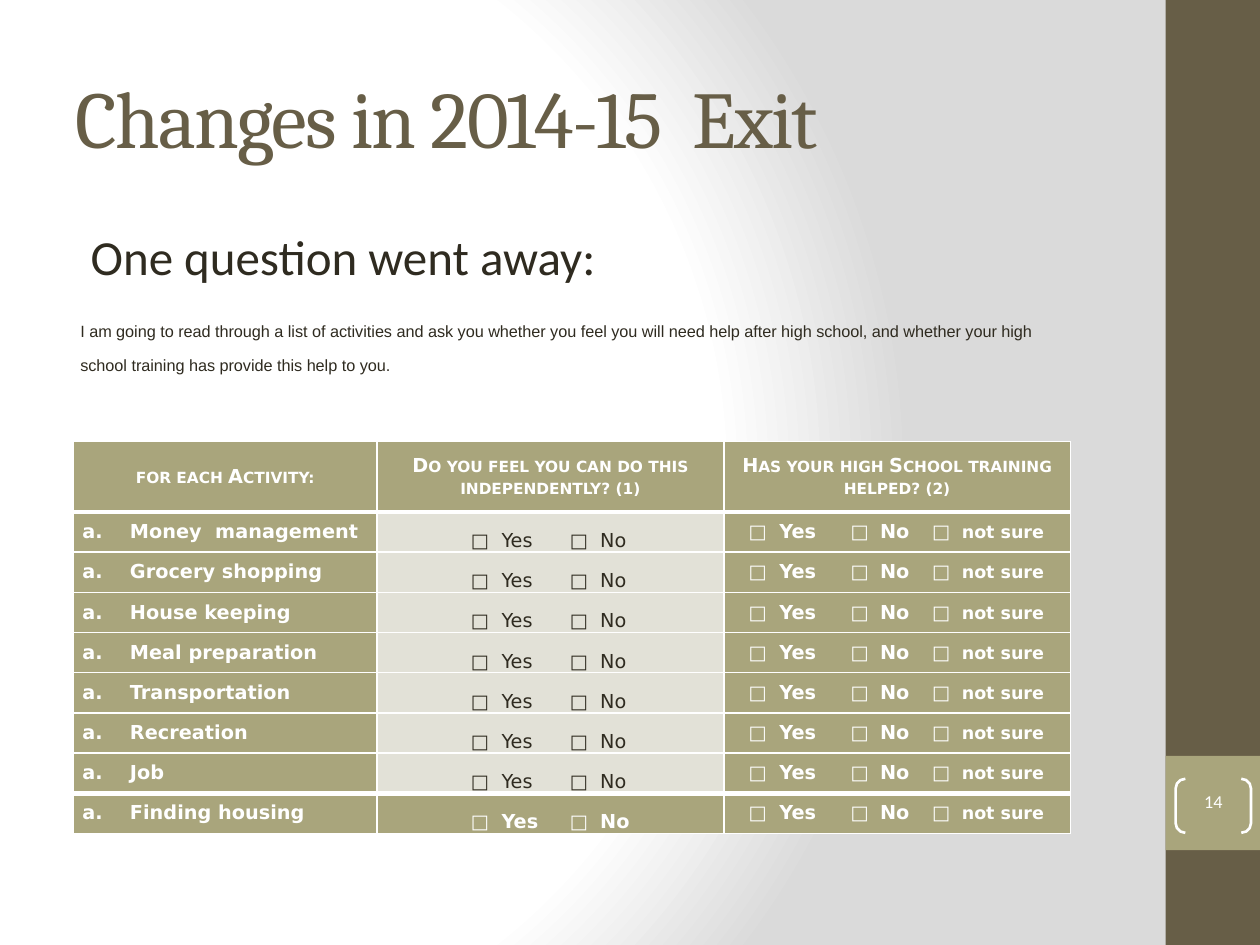
"""Build the slide on changes in the 2014-15 exit survey."""
from dataclasses import dataclass

from lxml.etree import SubElement
from pptx import Presentation
from pptx.dml.color import RGBColor
from pptx.enum.shapes import MSO_SHAPE as Shape
from pptx.enum.text import MSO_ANCHOR as Anchor, PP_ALIGN as Align
from pptx.oxml import parse_xml
from pptx.oxml.ns import nsdecls, qn
from pptx.util import Cm, Pt


@dataclass(frozen=True)
class Theme:
    dark: str = "675E47"
    accent: str = "A9A57C"
    pale: str = "E2E1D7"
    ink: str = "2F2B20"
    white: str = "FFFFFF"
    edge: str = "DADADA"
    title_size: int = 46
    lead_size: int = 28
    number_size: int = 18
    intro_size: int = 16
    table_size: int = 11
    note_size: int = 10
    title_font: str = "Cambria"
    body_font: str = "Calibri"
    intro_font: str = "Arial"
    table_font: str = "DejaVu Sans"


THEME = Theme()
INTRO = (
    "I am going to read through a list of activities and ask you whether you feel "
    "you will need help after high school, and whether your high school training "
    "has provide this help to you."
)
HEADERS = (
    "for each Activity:",
    "Do you feel you can do this independently? (1)",
    "Has your high School training helped? (2)",
)
ACTIVITIES = (
    "Money  management", "Grocery shopping", "House keeping", "Meal preparation",
    "Transportation", "Recreation", "Job", "Finding housing",
)
COLUMN_WIDTHS = (6.12, 6.99, 6.99)
HEADER_HEIGHT, ROW_HEIGHT = 1.42, 0.81
CELL_MARGIN = 0.18


def set_background(slide):
    stops = "".join(
        f'<a:gs pos="{position}000"><a:srgbClr val="{color}"/></a:gs>'
        for position, color in ((0, THEME.white), (75, THEME.white), (100, THEME.edge))
    )
    slide.element.cSld.insert(0, parse_xml(
        f'<p:bg {nsdecls("p", "a")}><p:bgPr><a:gradFill rotWithShape="1">'
        f'<a:gsLst>{stops}</a:gsLst><a:path path="circle">'
        '<a:fillToRect l="20000" t="50000" r="100000" b="50000"/></a:path>'
        '</a:gradFill><a:effectLst/></p:bgPr></p:bg>'
    ))


def style_paragraph(paragraph, font, size, color, bold=False, align=Align.LEFT, **extras):
    paragraph.alignment = align
    paragraph.font.name = font
    paragraph.font.size = Pt(size)
    paragraph.font.bold = bold
    paragraph.font.color.rgb = RGBColor.from_string(color)
    properties = paragraph._p.get_or_add_pPr().get_or_add_defRPr()
    for name, value in extras.items():
        properties.set(name, value)


def add_block(slide, kind, left, top, width, height, fill=None):
    shape = slide.shapes.add_shape(kind, Cm(left), Cm(top), Cm(width), Cm(height))
    shape.shadow.inherit = False
    shape.line.fill.background()
    if fill:
        shape.fill.solid()
        shape.fill.fore_color.rgb = RGBColor.from_string(fill)
    else:
        shape.fill.background()
    return shape


def add_text(slide, text, left, top, width, height, anchor, *style, **extras):
    frame = slide.shapes.add_textbox(Cm(left), Cm(top), Cm(width), Cm(height)).text_frame
    frame.word_wrap = True
    frame.vertical_anchor = anchor
    paragraph = frame.paragraphs[0]
    paragraph.add_run().text = text
    style_paragraph(paragraph, *style, **extras)
    return frame


def add_page_number(slide, number):
    bracket = add_block(slide, Shape.DOUBLE_BRACKET, 23.7, 15.7, 1.52, 1.09)
    bracket.adjustments[0] = 0.18
    bracket.line.color.rgb = RGBColor.from_string(THEME.white)
    bracket.line.width = Pt(1.5)
    frame = bracket.text_frame
    frame.margin_left = frame.margin_right = frame.margin_top = frame.margin_bottom = 0
    frame.vertical_anchor = Anchor.MIDDLE
    paragraph = frame.paragraphs[0]
    paragraph.add_run().text = number
    style_paragraph(paragraph, THEME.body_font, THEME.number_size, THEME.white,
                    align=Align.CENTER, baseline="30000")


def set_borders(cell, top, bottom):
    properties = cell._tc.get_or_add_tcPr()
    widths = {"lnL": 1, "lnR": 1, "lnT": top, "lnB": bottom}
    for position, (side, width) in enumerate(widths.items()):
        properties.insert(position, parse_xml(
            f'<a:{side} {nsdecls("a")} w="{Pt(width)}"><a:solidFill>'
            f'<a:srgbClr val="{THEME.white}"/></a:solidFill></a:{side}>'
        ))


def fill_cell(cell, parts, fill=THEME.accent, color=THEME.white, bold=True,
              align=Align.LEFT, anchor=Anchor.MIDDLE, start=0.0, **extras):
    cell.fill.solid()
    cell.fill.fore_color.rgb = RGBColor.from_string(fill)
    cell.margin_left, cell.margin_right = Cm(CELL_MARGIN + start), Cm(CELL_MARGIN)
    cell.margin_top = cell.margin_bottom = 0
    cell.vertical_anchor = anchor
    paragraph = cell.text_frame.paragraphs[0]
    for part in parts:
        paragraph.add_run().text = part
    style_paragraph(paragraph, THEME.table_font, THEME.table_size, color, bold, align, **extras)
    return paragraph


def set_letter_bullet(paragraph):
    properties = paragraph._p.get_or_add_pPr()
    properties.set("marL", str(Cm(0.96)))
    properties.set("indent", str(Cm(-0.96)))
    properties.insert(0, parse_xml(f'<a:buAutoNum {nsdecls("a")} type="alphaLcPeriod"/>'))


def set_tabs(paragraph, positions):
    tabs = parse_xml(f'<a:tabLst {nsdecls("a")}/>')
    for position in positions:
        SubElement(tabs, qn("a:tab"), pos=str(Cm(position)), algn="l")
    paragraph._p.get_or_add_pPr().insert(0, tabs)


def add_activity_table(slide):
    last = len(ACTIVITIES)
    height = HEADER_HEIGHT + last * ROW_HEIGHT
    table = slide.shapes.add_table(last + 1, len(HEADERS), Cm(1.48), Cm(8.9),
                                   Cm(sum(COLUMN_WIDTHS)), Cm(height)).table
    table.first_row = table.horz_banding = False
    for column, width in zip(table.columns, COLUMN_WIDTHS):
        column.width = Cm(width)
    for index, row in enumerate(table.rows):
        row.height = Cm(ROW_HEIGHT if index else HEADER_HEIGHT)
        for cell in row.cells:
            set_borders(cell, 3 if index in (1, last) else 1, 3 if index in (0, last - 1) else 1)
    for cell, header in zip(table.rows[0].cells, HEADERS):
        fill_cell(cell, [header], align=Align.CENTER, cap="small")
    for index, activity in enumerate(ACTIVITIES, 1):
        name, independent, helped = table.rows[index].cells
        set_letter_bullet(fill_cell(name, [activity]))
        plain = {} if index == last else {"fill": THEME.pale, "color": THEME.ink, "bold": False}
        answer = fill_cell(independent, ["□\tYes\t□\tNo"], anchor=Anchor.BOTTOM,
                           start=1.71, **plain)
        set_tabs(answer, (0.62, 2.0, 2.61))
        answer = fill_cell(helped, ["□\tYes\t□\tNo\t□\t", "not sure"], start=0.32)
        answer.runs[-1].font.size = Pt(THEME.note_size)
        set_tabs(answer, (0.62, 2.06, 2.65, 3.7, 4.3))


def main():
    presentation = Presentation()
    presentation.slide_width, presentation.slide_height = Cm(25.4), Cm(19.05)
    slide = presentation.slides.add_slide(presentation.slide_layouts[6])
    set_background(slide)
    add_block(slide, Shape.RECTANGLE, 23.5, 0, 1.9, 19.05, THEME.dark)
    add_block(slide, Shape.RECTANGLE, 23.5, 15.24, 1.9, 1.9, THEME.accent)
    add_text(slide, "Changes in 2014-15  Exit", 1.27, 0.76, 21.16, 3.18, Anchor.MIDDLE,
             THEME.title_font, THEME.title_size, THEME.dark, spc="-100")
    lead = add_text(slide, "One question went away:", 1.27, 4.45, 21.16, 13.33, Anchor.TOP,
                    THEME.body_font, THEME.lead_size, THEME.ink)
    lead.margin_left = Cm(0.56)
    add_page_number(slide, "14")
    add_activity_table(slide)
    intro = add_text(slide, INTRO, 1.37, 5.92, 19.89, 3.07, Anchor.MIDDLE,
                     THEME.intro_font, THEME.intro_size, THEME.ink, baseline="30000")
    intro.margin_bottom = Cm(0.86)
    presentation.save("out.pptx")


if __name__ == "__main__":
    main()
